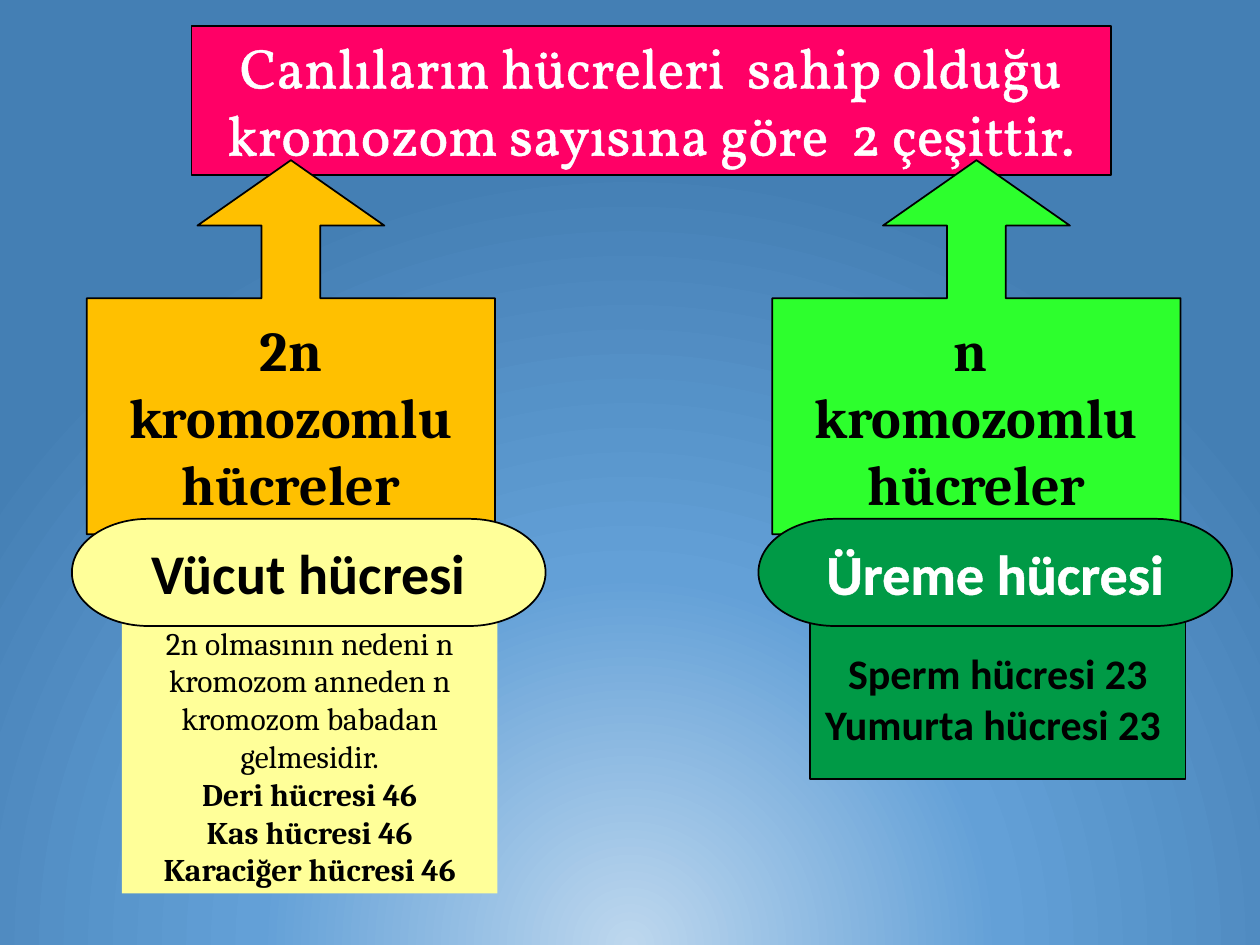
from lxml.etree import SubElement
from pptx import Presentation
from pptx.dml.color import RGBColor
from pptx.enum.shapes import MSO_SHAPE
from pptx.enum.text import MSO_ANCHOR, MSO_AUTO_SIZE, PP_ALIGN
from pptx.oxml import parse_xml
from pptx.oxml.ns import nsdecls, qn
from pptx.util import Cm, Pt

COLORS = {
    "black": "000000", "white": "FFFFFF", "pink": "FF0066", "orange": "FFC000",
    "yellow": "FFFF99", "lime": "2DFF2D", "green": "009A46",
    "glow": "BDD7EE", "sky": "63A0D7", "edge": "447FB4",
}

presentation = Presentation()
presentation.slide_width, presentation.slide_height = Cm(25.4), Cm(19.05)
slide = presentation.slides.add_slide(presentation.slide_layouts[6])

background = parse_xml(f"""
<p:bg {nsdecls("p", "a")}><p:bgPr><a:gradFill rotWithShape="1"><a:gsLst>
<a:gs pos="0"><a:srgbClr val="{COLORS['glow']}"><a:alpha val="62000"/></a:srgbClr></a:gs>
<a:gs pos="47000"><a:srgbClr val="{COLORS['sky']}"/></a:gs>
<a:gs pos="100000"><a:srgbClr val="{COLORS['edge']}"/></a:gs>
</a:gsLst><a:path path="circle">
<a:fillToRect l="50000" t="130000" r="50000" b="-30000"/>
</a:path></a:gradFill><a:effectLst/></p:bgPr></p:bg>""")
slide.element.find(qn("p:cSld")).insert(0, background)


def add_box(text, kind, box, fill, font, size, color="black", line=True,
            bold_from=0, outline=None, anchor=MSO_ANCHOR.MIDDLE):
    """Add a filled shape; paragraphs from index bold_from on are bold."""
    shape = slide.shapes.add_shape(kind, *[Cm(length) for length in box])
    shape.shadow.inherit = False
    shape.fill.solid()
    shape.fill.fore_color.rgb = RGBColor.from_string(COLORS[fill])
    if line:
        shape.line.color.rgb = RGBColor.from_string(COLORS["black"])
        shape.line.width = Pt(1)
    else:
        shape.line.fill.background()
    frame = shape.text_frame
    frame.word_wrap = True
    frame.vertical_anchor = anchor
    frame.text = text
    for index, paragraph in enumerate(frame.paragraphs):
        paragraph.alignment = PP_ALIGN.CENTER
        for run in paragraph.runs:
            run.font.name = font
            run.font.size = Pt(size)
            run.font.bold = index >= bold_from
            run.font.color.rgb = RGBColor.from_string(COLORS[color])
            if outline is not None:
                properties = run.font._element
                border = SubElement(properties, qn("a:ln"), w=str(Pt(outline)))
                solid = SubElement(border, qn("a:solidFill"))
                SubElement(solid, qn("a:srgbClr"), val=COLORS[color])
                properties.insert(0, border)
    return shape


title = add_box("Canlıların hücreleri  sahip olduğu kromozom sayısına göre  2 çeşittir.",
                MSO_SHAPE.RECTANGLE, (3.86, 0.53, 18.54, 3), "pink", "Vollkorn", 32,
                color="white", bold_from=1, outline=0.75, anchor=MSO_ANCHOR.TOP)
title.text_frame.auto_size = MSO_AUTO_SIZE.SHAPE_TO_FIT_TEXT

for text, left, fill in [("2n kromozomlu hücreler", 1.75, "orange"),
                         ("n \nkromozomlu hücreler", 15.57, "lime")]:
    callout = add_box(text, MSO_SHAPE.UP_ARROW_CALLOUT, (left, 3.23, 8.23, 7.54),
                      fill, "Cambria", 32)
    for index, value in enumerate([0.157, 0.25, 0.175, 0.631]):
        callout.adjustments[index] = value

add_box("2n olmasının nedeni n kromozom anneden n kromozom babadan gelmesidir.\n"
        "Deri hücresi 46\nKas hücresi 46\nKaraciğer hücresi 46",
        MSO_SHAPE.RECTANGLE, (2.46, 12.47, 7.57, 5.54), "yellow", "Cambria", 18,
        line=False, bold_from=1)
add_box("Sperm hücresi 23\nYumurta hücresi 23 ",
        MSO_SHAPE.RECTANGLE, (16.33, 12.45, 7.57, 3.25), "green", "Calibri", 24)

for text, left, fill, color, outline in [
        ("Vücut hücresi", 1.45, "yellow", "black", None),
        ("Üreme hücresi", 15.29, "green", "white", 0)]:
    add_box(text, MSO_SHAPE.FLOWCHART_TERMINATOR, (left, 10.46, 9.55, 2.16),
            fill, "Calibri", 32, color=color, outline=outline)

presentation.save("out.pptx")
